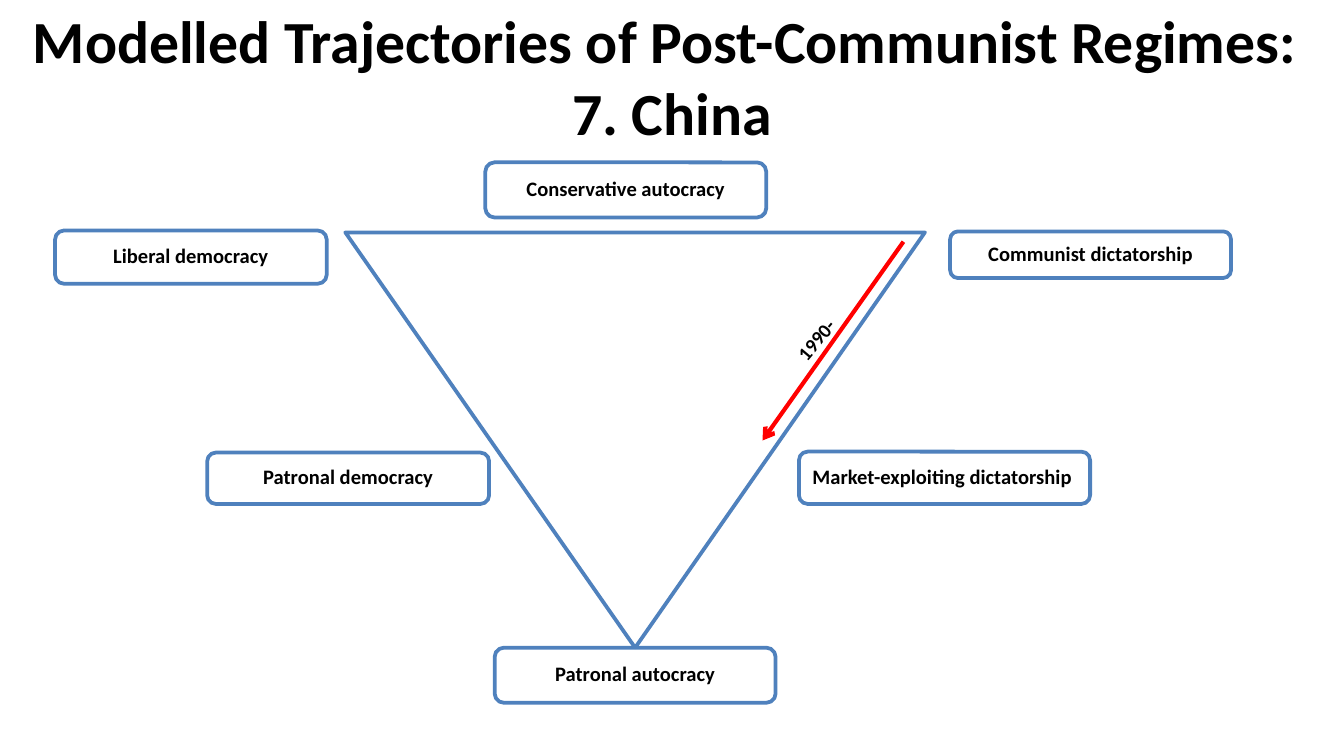
import dataclasses

import lxml.etree
import pptx
import pptx.dml.color
import pptx.enum.shapes
import pptx.enum.text
import pptx.oxml.ns
import pptx.util

Pt = pptx.util.Pt
RGBColor = pptx.dml.color.RGBColor
Shapes = pptx.enum.shapes.MSO_SHAPE
Align = pptx.enum.text.PP_ALIGN
Anchor = pptx.enum.text.MSO_ANCHOR


@dataclasses.dataclass(frozen=True)
class Theme:
    font: str = "Calibri"
    ink: str = "000000"
    outline: str = "4F81BD"
    box_fill: str = "FFFFFF"
    box_opacity: int = 90000
    arrow: str = "FF0000"
    title_size: float = 32
    box_size: float = 11
    period_size: float = 10.5
    outline_width: float = 2
    arrow_width: float = 2.25


def apply(target, values):
    for name, value in values.items():
        setattr(target, name, value)


def add_xml(parent, tag, **attributes):
    return lxml.etree.SubElement(parent, pptx.oxml.ns.qn(tag), **attributes)


class RegimeSlide:
    def __init__(self, presentation, theme):
        self.theme = theme
        self.slide = presentation.slides.add_slide(presentation.slide_layouts[6])

    def set_text(self, shape, text, size, align, frame_format, line_spacing=1.0):
        apply(shape.text_frame, {"word_wrap": True, **frame_format})
        paragraph = shape.text_frame.paragraphs[0]
        paragraph.text = text
        apply(paragraph, {"alignment": align, "line_spacing": line_spacing})
        for run in paragraph.runs:
            apply(run.font, {"name": self.theme.font, "size": Pt(size), "bold": True})
            run.font.color.rgb = RGBColor.from_string(self.theme.ink)

    def text(self, text, bounds, size, align, anchor, rotation=0):
        shape = self.slide.shapes.add_textbox(*map(Pt, bounds))
        shape.rotation = rotation
        self.set_text(shape, text, size, align, {"vertical_anchor": anchor})

    def outlined(self, kind, bounds):
        shape = self.slide.shapes.add_shape(kind, *map(Pt, bounds))
        shape.shadow.inherit = False
        shape.fill.background()
        shape.line.color.rgb = RGBColor.from_string(self.theme.outline)
        shape.line.width = Pt(self.theme.outline_width)
        return shape

    def triangle(self, bounds):
        self.outlined(Shapes.ISOSCELES_TRIANGLE, bounds).rotation = 180

    def regime_box(self, text, bounds):
        shape = self.outlined(Shapes.ROUNDED_RECTANGLE, bounds)
        shape.fill.solid()
        shape.fill.fore_color.rgb = RGBColor.from_string(self.theme.box_fill)
        color = shape._element.spPr.find(".//" + pptx.oxml.ns.qn("a:srgbClr"))
        add_xml(color, "a:alpha", val=str(self.theme.box_opacity))
        sides = ("left", "top", "right", "bottom")
        frame_format = {f"margin_{side}": Pt(3.6) for side in sides}
        frame_format["vertical_anchor"] = Anchor.MIDDLE
        self.set_text(shape, text, self.theme.box_size, Align.CENTER, frame_format, 0.9)

    def arrow(self, start, end):
        connector = self.slide.shapes.add_connector(
            pptx.enum.shapes.MSO_CONNECTOR.STRAIGHT, *map(Pt, start + end)
        )
        connector.line.color.rgb = RGBColor.from_string(self.theme.arrow)
        connector.line.width = Pt(self.theme.arrow_width)
        properties = connector._element.spPr
        add_xml(properties.find(pptx.oxml.ns.qn("a:ln")), "a:tailEnd", type="arrow")
        add_xml(properties, "a:effectLst")


REGIMES = {
    "Communist dictatorship": (509, 124, 150.5, 25),
    "Liberal democracy": (29.5, 123.5, 145.5, 28.5),
    "Patronal autocracy": (265, 347, 150.5, 29.5),
    "Conservative autocracy": (260, 87, 150.5, 29.5),
    "Market-exploiting dictatorship ": (428, 242, 156, 28),
    "Patronal democracy": (111, 242.5, 151, 27.5),
}


def main():
    presentation = pptx.Presentation()
    apply(presentation, {"slide_width": Pt(720), "slide_height": Pt(405)})
    theme = Theme()
    slide = RegimeSlide(presentation, theme)
    slide.text(
        "Modelled Trajectories of Post-Communist Regimes: \v7. China",
        (0, 4.5, 720, 72), theme.title_size, Align.CENTER, Anchor.MIDDLE,
    )
    slide.triangle((185, 124.5, 310.5, 222.5))
    for name, bounds in REGIMES.items():
        slide.regime_box(name, bounds)
    slide.arrow((484, 129.5), (408.5, 236))
    slide.text(
        "1990-", (410.5, 156, 80.5, 20), theme.period_size, Align.LEFT, Anchor.TOP, 310.1
    )
    presentation.save("out.pptx")


if __name__ == "__main__":
    main()
